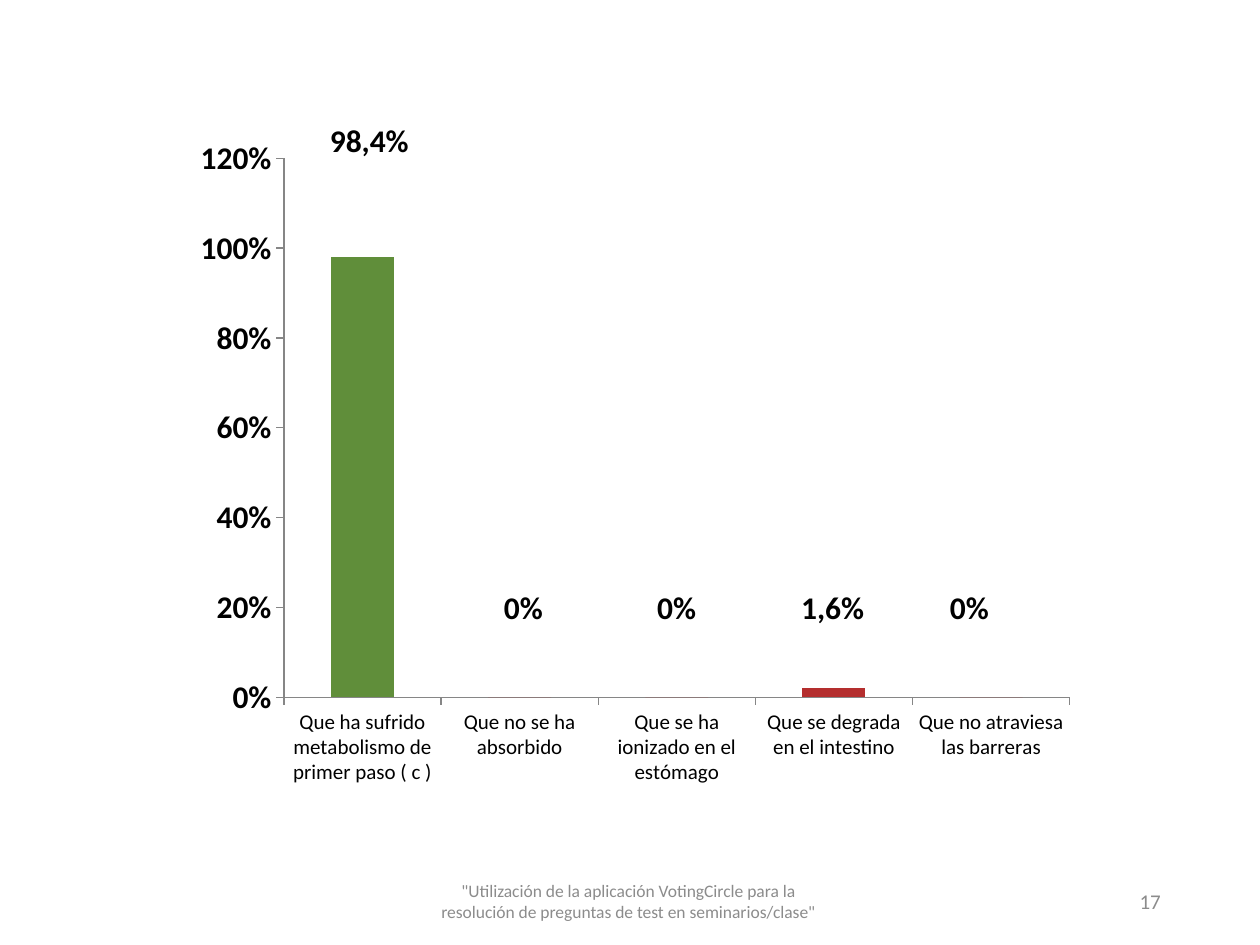
from dataclasses import dataclass

import pptx
import pptx.chart.data
import pptx.dml.color
import pptx.enum.chart
import pptx.enum.text
import pptx.oxml
import pptx.oxml.ns
import pptx.util
from pptx.util import Cm

FONT = "Calibri"
BLACK, GREY, AXIS_GREY = "000000", "8C8C8C", "868686"
GREEN, RED = "608E3A", "B42E2E"
ALIGN = pptx.enum.text.PP_ALIGN
ANCHOR = pptx.enum.text.MSO_ANCHOR
TICK = pptx.enum.chart.XL_TICK_MARK


@dataclass
class Label:
    text: str
    left: float
    top: float
    width: float
    size: int = 18
    bold: bool = True
    color: str = BLACK
    align: ALIGN = ALIGN.LEFT
    anchor: ANCHOR = ANCHOR.TOP
    wrap: bool = False


@dataclass
class Answer:
    text: str
    share: float
    color: str = RED


ANSWERS = [
    Answer("Que ha sufrido metabolismo de primer paso ( c )", 0.98, GREEN),
    Answer("Que no se ha absorbido", 0),
    Answer("Que se ha ionizado en el estómago", 0),
    Answer("Que se degrada en el intestino", 0.02),
    Answer("Que no atraviesa las barreras", 0),
]

LOW, FOOT = 11.73, 17.65
FOOTER = {"top": FOOT, "bold": False, "color": GREY, "anchor": ANCHOR.MIDDLE, "wrap": True}
FOOTERS = [
    Label('"Utilización de la aplicación VotingCircle para la resolución de '
          'preguntas de test en seminarios/clase"',
          left=8.37, width=8.59, size=10, align=ALIGN.CENTER, **FOOTER),
    Label("17", left=17.93, width=5.72, size=12, align=ALIGN.RIGHT, **FOOTER),
]
SHARES = [
    Label("98,4%", 6.4, 2.32, 2.11),
    Label("0%", 9.91, LOW, 1.3),
    Label("0%", 13, LOW, 1.3),
    Label("1,6%", 15.9, LOW, 1.78),
    Label("0%", 18.9, LOW, 1.3),
]


def rgb(value: str) -> pptx.dml.color.RGBColor:
    return pptx.dml.color.RGBColor.from_string(value)


def apply(target, values: dict) -> None:
    for name, value in values.items():
        setattr(target, name, value)


def style_font(font, size: int, bold: bool = False, color: str = BLACK) -> None:
    apply(font, {"name": FONT, "size": pptx.util.Pt(size), "bold": bold})
    font.color.rgb = rgb(color)


def add_label(page, label: Label) -> None:
    box = page.shapes.add_textbox(Cm(label.left), Cm(label.top), Cm(label.width), Cm(1.02))
    apply(box.text_frame, {"word_wrap": label.wrap, "vertical_anchor": label.anchor})
    para = box.text_frame.paragraphs[0]
    para.alignment = label.align
    span = para.add_run()
    span.text = label.text
    style_font(span.font, label.size, label.bold, label.color)


def style_axis(axis, size: int, bold: bool, values: dict) -> None:
    apply(axis, {"has_major_gridlines": False, "major_tick_mark": TICK.OUTSIDE,
                 "minor_tick_mark": TICK.NONE, **values})
    style_font(axis.tick_labels.font, size, bold)
    axis.format.line.color.rgb = rgb(AXIS_GREY)
    axis.format.line.width = pptx.util.Pt(0.75)


def place_plot(chart, x: float, y: float, w: float, h: float) -> None:
    """Fix the inner plot area, in fractions of the chart."""
    sizes = "".join(f'<c:{key} val="{value}"/>'
                    for key, value in {"x": x, "y": y, "w": w, "h": h}.items())
    layout = pptx.oxml.parse_xml(
        f'<c:layout {pptx.oxml.ns.nsdecls("c")}><c:manualLayout>'
        '<c:layoutTarget val="inner"/><c:xMode val="edge"/><c:yMode val="edge"/>'
        f'{sizes}</c:manualLayout></c:layout>')
    plot_area = chart.plots[0]._element.getparent()
    for old in plot_area.findall(pptx.oxml.ns.qn("c:layout")):
        plot_area.remove(old)
    plot_area.insert(0, layout)


def add_answer_chart(page, answers: list[Answer]) -> None:
    data = pptx.chart.data.CategoryChartData(number_format="0%")
    data.categories = [answer.text for answer in answers]
    data.add_series("Series 1", [answer.share for answer in answers])
    chart = page.shapes.add_chart(
        pptx.enum.chart.XL_CHART_TYPE.COLUMN_CLUSTERED,
        Cm(3.72), Cm(2.51), Cm(18.21), Cm(13.59), data).chart
    apply(chart, {"has_legend": False, "has_title": False})
    style_font(chart.font, 10)

    plot = chart.plots[0]
    apply(plot, {"gap_width": 150, "vary_by_categories": False})
    for index, answer in enumerate(answers):
        fill = plot.series[0].points[index].format.fill
        fill.solid()
        fill.fore_color.rgb = rgb(answer.color)

    style_axis(chart.category_axis, 12, False, {})
    style_axis(chart.value_axis, 18, True,
               {"minimum_scale": 0, "maximum_scale": 1.2, "major_unit": 0.2})
    apply(chart.value_axis.tick_labels,
          {"number_format": "0%", "number_format_is_linked": False})
    place_plot(chart, 0.11, 0.05, 0.87, 0.8)


def main() -> None:
    deck = pptx.Presentation()
    apply(deck, {"slide_width": Cm(25.4), "slide_height": Cm(19.05)})
    page = deck.slides.add_slide(deck.slide_layouts[6])

    # Footer and page number
    for label in FOOTERS:
        add_label(page, label)

    # Chart, with the shares written over it
    add_answer_chart(page, ANSWERS)
    for label in SHARES:
        add_label(page, label)

    deck.save("out.pptx")


if __name__ == "__main__":
    main()
